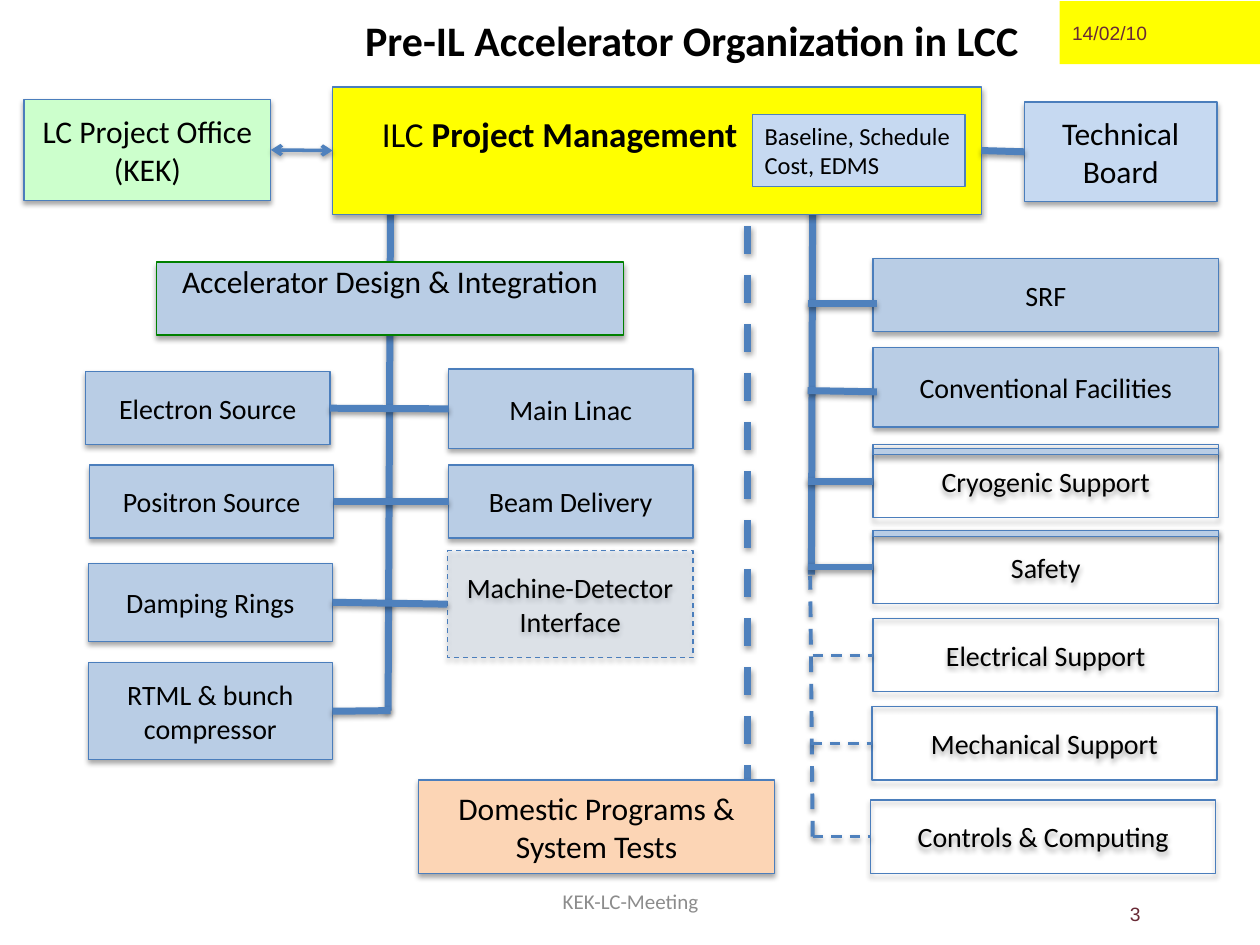
from dataclasses import dataclass
from typing import Optional

import pptx
import pptx.dml.color
import pptx.enum.dml
import pptx.enum.shapes
import pptx.enum.text
import pptx.oxml
import pptx.oxml.ns
import pptx.util

Inches = pptx.util.Inches
Pt = pptx.util.Pt
Align = pptx.enum.text.PP_ALIGN
Anchor = pptx.enum.text.MSO_ANCHOR
Shape = pptx.enum.shapes.MSO_SHAPE
DASH = pptx.enum.dml.MSO_LINE.DASH
BLUE, PALE, SKY, YELLOW = "4F81BD", "B9CDE5", "C6D9F1", "FFFF00"
RIGHT_SIDE, LEFT_SIDE = 3, 1


@dataclass
class Unit:
    text: str
    left: float
    top: float
    width: float
    height: float = 0.58
    fill: Optional[str] = PALE
    line: str = "4B7EBC"
    size: float = 16
    dashed: bool = False
    opacity: int = 100


@dataclass
class Link:
    start: tuple
    end: tuple
    width: float = 4
    dashed: bool = False
    first: str = ""
    last: str = ""
    arrows: bool = False


def colour(value: str) -> pptx.dml.color.RGBColor:
    return pptx.dml.color.RGBColor.from_string(value)


def add_shadow(item, opacity: int, distance: float) -> None:
    item._element.spPr.append(pptx.oxml.parse_xml(
        f'<a:effectLst {pptx.oxml.ns.nsdecls("a")}>'
        f'<a:outerShdw blurRad="{Pt(3.1)}" dist="{Pt(distance)}" dir="5400000" rotWithShape="0">'
        f'<a:srgbClr val="000000"><a:alpha val="{opacity * 1000}"/></a:srgbClr>'
        '</a:outerShdw></a:effectLst>'))


def write(box, text: str, size: float, ink: str = "000000", font: str = "Calibri",
          align=Align.CENTER, anchor=Anchor.MIDDLE, bold: bool = False, wrap: bool = True) -> None:
    frame = box.text_frame
    frame.text = text
    frame.word_wrap = wrap
    frame.vertical_anchor = anchor
    for para in frame.paragraphs:
        para.alignment = align
        for span in para.runs:
            span.font.size = Pt(size)
            span.font.name = font
            span.font.bold = bold
            span.font.color.rgb = colour(ink)


def add_box(page, unit: Unit, kind=Shape.FLOWCHART_PROCESS, shadow: bool = True):
    box = page.shapes.add_shape(kind, Inches(unit.left), Inches(unit.top),
                                Inches(unit.width), Inches(unit.height))
    if unit.fill:
        box.fill.solid()
        box.fill.fore_color.rgb = colour(unit.fill)
    else:
        box.fill.background()
    if unit.opacity < 100:
        solid = box._element.spPr.find(pptx.oxml.ns.qn("a:solidFill"))
        solid[0].append(pptx.oxml.parse_xml(
            f'<a:alpha {pptx.oxml.ns.nsdecls("a")} val="{unit.opacity * 1000}"/>'))
    box.line.color.rgb = colour(unit.line)
    box.line.width = Pt(0.75)
    if unit.dashed:
        box.line.dash_style = DASH
    if shadow:
        add_shadow(box, 35, 1.8)
    else:
        box.shadow.inherit = False
    if unit.text:
        write(box, unit.text, unit.size)
    return box


def add_link(page, link: Link, boxes: dict) -> None:
    line = page.shapes.add_connector(pptx.enum.shapes.MSO_CONNECTOR.STRAIGHT,
                                     *[Inches(value) for value in link.start + link.end])
    if link.first:
        line.begin_connect(boxes[link.first], RIGHT_SIDE)
    if link.last:
        line.end_connect(boxes[link.last], LEFT_SIDE)
    line.line.color.rgb = colour(BLUE)
    line.line.width = Pt(link.width)
    if link.dashed:
        line.line.dash_style = DASH
    if link.arrows:
        for end in ("headEnd", "tailEnd"):
            line.line._ln.append(pptx.oxml.parse_xml(
                f'<a:{end} {pptx.oxml.ns.nsdecls("a")} type="arrow"/>'))
    add_shadow(line, 38, 1.6)


def add_label(page, text: str, left: float, top: float, width: float, height: float,
              size: float, **style) -> None:
    box = page.shapes.add_textbox(Inches(left), Inches(top), Inches(width), Inches(height))
    write(box, text, size, **style)


TRUNKS = [
    Link((3.08, 5.64), (3.1, 1.47)),
    Link((6.44, 4.56), (6.45, 1.47)),
    Link((5.93, 6.68), (5.93, 1.45), dashed=True),
    Link((6.45, 6.64), (6.43, 4.57), 2.25, dashed=True),
]
MANAGEMENT = "ILC Project Management"
OFFICE = "LC Project Office (KEK)"
BOARD = "Technical\nBoard"
DESIGN = "Accelerator Design & Integration"
INTERFACE = "Machine-Detector Interface"
RTML = "RTML & bunch compressor"
UNITS = [
    Unit("Electrical Support", 6.93, 4.91, 2.74, fill=None),
    Unit("Mechanical Support", 6.92, 5.61, 2.74, fill=None),
    Unit("Cryogenic Support", 6.93, 3.53, 2.74, fill=None),
    Unit("SRF", 6.93, 2.05, 2.74),
    Unit("Conventional Facilities", 6.93, 2.76, 2.74, 0.63),
    Unit("Controls & Computing", 6.91, 6.35, 2.74, fill=None),
    Unit("Safety", 6.93, 4.21, 2.74, fill=None),
    Unit(OFFICE, 0.19, 0.79, 1.96, 0.8, "CCFFCC", size=18),
    Unit(DESIGN, 1.24, 2.08, 3.71, line="008000", size=18),
    Unit("Electron Source", 0.68, 2.95, 1.94),
    Unit("Positron Source", 0.71, 3.69, 1.94),
    Unit("Damping Rings", 0.7, 4.47, 1.94, 0.62),
    Unit(RTML, 0.7, 5.26, 1.94, 0.77),
    Unit("Main Linac", 3.56, 2.93, 1.94, 0.63),
    Unit("Beam Delivery", 3.56, 3.69, 1.94),
    Unit(INTERFACE, 3.55, 4.37, 1.95, 0.85, dashed=True, opacity=25),
    Unit("Domestic Programs &\nSystem Tests", 3.32, 6.19, 2.83, 0.74, "FCD5B5", size=18),
    Unit(MANAGEMENT, 2.64, 0.69, 5.15, 1.01, YELLOW, size=20),
    Unit(BOARD, 8.13, 0.81, 1.53, 0.79, SKY, size=18),
]
STRIPS = [Unit("", 6.93, top, 2.74, 0.05) for top in (3.56, 4.21)]
LINKS = [
    Link((2.62, 3.24), (3.56, 3.25), first="Electron Source", last="Main Linac"),
    Link((2.64, 3.98), (3.56, 3.98), first="Positron Source", last="Beam Delivery"),
    Link((2.63, 4.79), (3.55, 4.8), first="Damping Rings", last=INTERFACE),
    Link((2.63, 5.64), (3.1, 5.64), first=RTML),
    Link((7.79, 1.2), (8.13, 1.2), first=MANAGEMENT, last=BOARD),
    Link((2.15, 1.19), (2.64, 1.2), 2, first=OFFICE, last=MANAGEMENT, arrows=True),
    Link((6.41, 2.41), (6.96, 2.41)),
    Link((6.41, 3.1), (6.96, 3.11)),
    Link((6.41, 3.82), (6.93, 3.82), last="Cryogenic Support"),
    Link((6.41, 4.5), (6.93, 4.5), last="Safety"),
    Link((6.45, 5.2), (6.93, 5.2), 1.5, True, last="Electrical Support"),
    Link((6.44, 5.9), (6.92, 5.9), 1.5, True, last="Mechanical Support"),
    Link((6.45, 6.64), (6.91, 6.64), 1.5, True, last="Controls & Computing"),
]


def main() -> None:
    deck = pptx.Presentation()
    deck.slide_width, deck.slide_height = Inches(10), Inches(7.5)
    page = deck.slides.add_slide(deck.slide_layouts[6])

    date = add_box(page, Unit("", 8.41, 0.01, 1.59, 0.5, YELLOW), Shape.RECTANGLE, False)
    date.line.fill.background()
    write(date, "14/02/10", 11, "692A36", "Arial", Align.LEFT)
    add_label(page, "3", 7.07, 7, 2.08, 0.5, 11, ink="692A36", font="Arial", align=Align.RIGHT)
    add_label(page, "Pre-IL Accelerator Organization in LCC", 2.8, 0.07, 5.6, 0.5, 24,
              align=Align.LEFT, anchor=Anchor.TOP, bold=True)

    for trunk in TRUNKS:
        add_link(page, trunk, {})
    boxes = {unit.text: add_box(page, unit) for unit in UNITS}
    for strip in STRIPS:
        add_box(page, strip)
    for link in LINKS:
        add_link(page, link, boxes)

    design = boxes[DESIGN].text_frame
    design.vertical_anchor = Anchor.TOP
    design.margin_top = 0

    management = boxes[MANAGEMENT].text_frame
    management.vertical_anchor = Anchor.TOP
    management.margin_top = Inches(0.2)
    management.margin_left = Inches(0.39)
    para = management.paragraphs[0]
    para.alignment = Align.LEFT
    para.runs[0].text = "ILC "
    span = para.add_run()
    span.text = "Project Management"
    span.font.size = Pt(20)
    span.font.name = "Calibri"
    span.font.bold = True
    span.font.color.rgb = colour("000000")

    scope = add_box(page, Unit("", 5.97, 0.91, 1.69, 0.57, SKY, BLUE), Shape.RECTANGLE, False)
    write(scope, "Baseline, Schedule\nCost, EDMS", 14, align=Align.LEFT,
          anchor=Anchor.TOP, wrap=False)
    add_label(page, "KEK-LC-Meeting", 3.42, 6.95, 3.17, 0.4, 12, ink="8C8C8C")
    deck.save("out.pptx")


if __name__ == "__main__":
    main()
